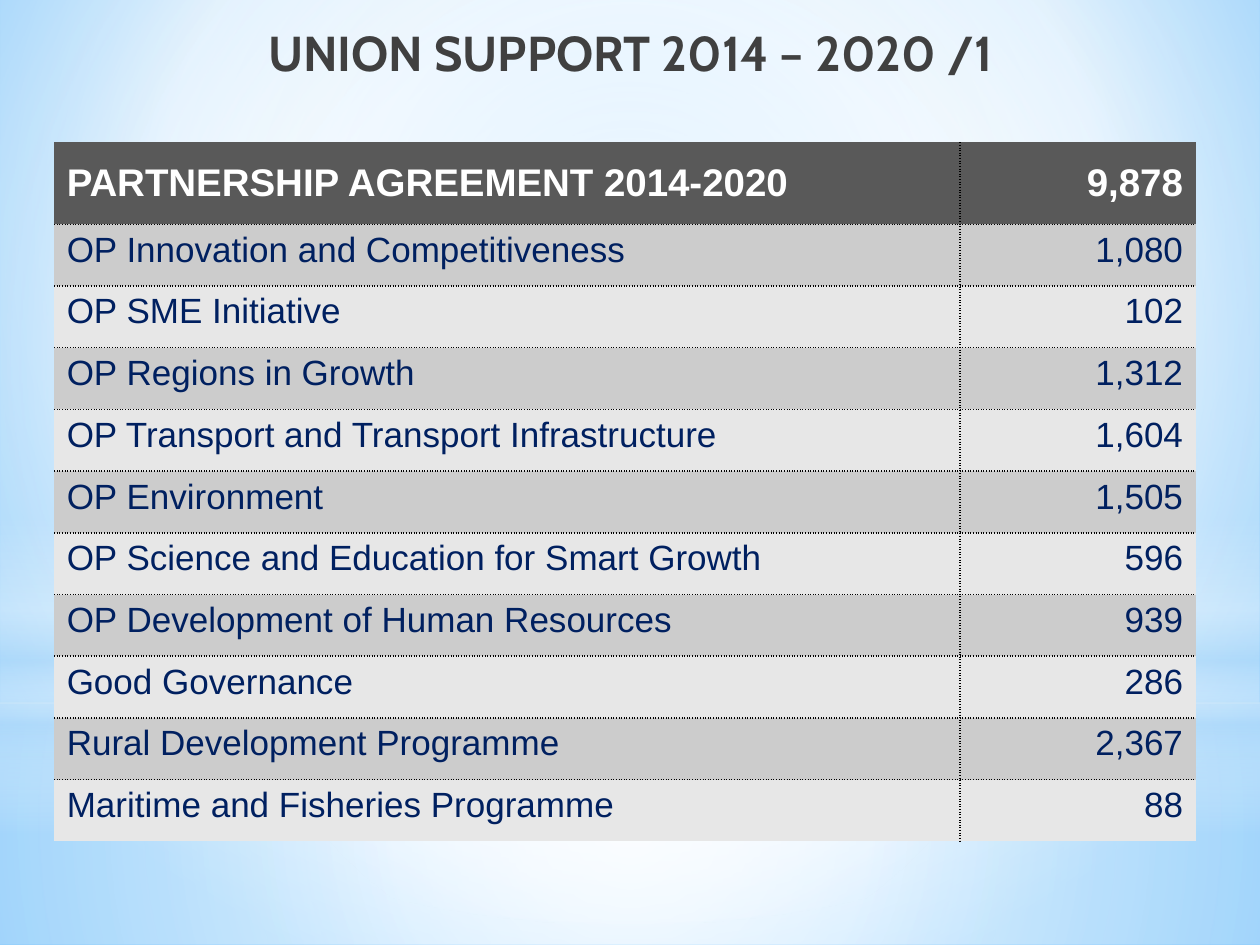
import pptx
import pptx.util
import pptx.dml.color
import pptx.enum.shapes
import pptx.enum.text
import pptx.oxml
import pptx.oxml.ns
import lxml.etree

Inches = pptx.util.Inches
Shape = pptx.enum.shapes.MSO_SHAPE
Align = pptx.enum.text.PP_ALIGN
Anchor = pptx.enum.text.MSO_ANCHOR
qn = pptx.oxml.ns.qn

COLORS = {
    "title": "404040",
    "header": "595959",
    "header_text": "FFFFFF",
    "body_text": "002060",
    "odd_row": "CCCCCC",
    "even_row": "E7E7E7",
    "border": "000000",
    "white": "FFFFFF",
    "haze": "B4DCFA",
    "sky": "9ED5FF",
    "deep_sky": "5BB9FF",
}
CENTER = (50, 50, 50, 50)

PROGRAMMES = [
    ("PARTNERSHIP AGREEMENT 2014-2020", "9,878"),
    ("OP Innovation and Competitiveness", "1,080"),
    ("OP SME Initiative", "102"),
    ("OP Regions in Growth", "1,312"),
    ("OP Transport and Transport Infrastructure", "1,604"),
    ("OP Environment", "1,505"),
    ("OP Science and Education for Smart Growth", "596"),
    ("OP Development of Human Resources", "939"),
    ("Good Governance", "286"),
    ("Rural Development Programme", "2,367"),
    ("Maritime and Fisheries Programme", "88"),
]


def add_node(parent, tag, **attributes):
    node = lxml.etree.SubElement(parent, qn(tag))
    for key, value in attributes.items():
        node.set(key, str(value))
    return node


class SlideBuilder:
    def __init__(self, slide):
        self.slide = slide
        self.title_font = "Cabin"
        self.table_font = "Arial"

    def gradient(self, fill, owner, stops, focus=None):
        fill.gradient()
        grad = next(owner.iter(qn("a:gradFill")))
        for child in list(grad):
            grad.remove(child)
        stop_list = add_node(grad, "a:gsLst")
        for position, color, opacity in stops:
            stop = add_node(stop_list, "a:gs", pos=position * 1000)
            rgb = add_node(stop, "a:srgbClr", val=COLORS[color])
            if opacity < 100:
                add_node(rgb, "a:alpha", val=opacity * 1000)
        if focus:
            circle = add_node(grad, "a:path", path="circle")
            edges = dict(zip("ltrb", (edge * 1000 for edge in focus)))
            add_node(circle, "a:fillToRect", **edges)
        else:
            add_node(grad, "a:lin", ang=90 * 60000, scaled=0)

    def background(self, stops, focus):
        self.gradient(self.slide.background.fill, self.slide.element, stops, focus)

    def glow(self, kind, top, height, stops, focus=None):
        shape = self.slide.shapes.add_shape(
            kind, 0, Inches(top), Inches(10), Inches(height))
        shape.shadow.inherit = False
        shape.line.fill.background()
        self.gradient(shape.fill, shape.element, stops, focus)

    def style_text(self, paragraph, font, size, color, bold, align):
        paragraph.alignment = align
        for run in paragraph.runs:
            run.font.name = font
            run.font.size = pptx.util.Pt(size)
            run.font.bold = bold
            run.font.color.rgb = pptx.dml.color.RGBColor.from_string(COLORS[color])

    def title(self, text, top, height):
        box = self.slide.shapes.add_textbox(0, Inches(top), Inches(10), Inches(height))
        frame = box.text_frame
        frame.word_wrap = True
        frame.auto_size = pptx.enum.text.MSO_AUTO_SIZE.SHAPE_TO_FIT_TEXT
        frame.text = text
        self.style_text(frame.paragraphs[0], self.title_font, 28, "title", True, Align.CENTER)

    def borders(self, cell, inner_sides):
        properties = cell._tc.get_or_add_tcPr()
        for side in "LRTB":
            line = add_node(properties, f"a:ln{side}", w=pptx.util.Pt(1))
            if side in inner_sides:
                solid = add_node(line, "a:solidFill")
                add_node(solid, "a:srgbClr", val=COLORS["border"])
                add_node(line, "a:prstDash", val="sysDot")
            else:
                add_node(line, "a:noFill")

    def table(self, rows, left, top, widths, header_height, row_height):
        heights = [header_height] + [row_height] * (len(rows) - 1)
        table = self.slide.shapes.add_table(
            len(rows), len(widths), Inches(left), Inches(top),
            Inches(sum(widths)), Inches(sum(heights))).table
        for column, width in zip(table.columns, widths):
            column.width = Inches(width)
        for r, (values, height) in enumerate(zip(rows, heights)):
            table.rows[r].height = Inches(height)
            header = r == 0
            fill = "header" if header else "odd_row" if r % 2 else "even_row"
            for c, value in enumerate(values):
                cell = table.cell(r, c)
                inner = "R" if c == 0 else "L"
                inner += "" if header else "T"
                inner += "B" if r < len(rows) - 1 else ""
                self.borders(cell, inner)
                cell.fill.solid()
                cell.fill.fore_color.rgb = pptx.dml.color.RGBColor.from_string(COLORS[fill])
                cell.vertical_anchor = Anchor.MIDDLE if header else Anchor.TOP
                cell.text_frame.text = value
                self.style_text(
                    cell.text_frame.paragraphs[0], self.table_font,
                    22 if header else 20,
                    "header_text" if header else "body_text",
                    header, Align.RIGHT if c else Align.LEFT)


def main():
    deck = pptx.Presentation()
    deck.slide_width = Inches(10)
    deck.slide_height = Inches(7.5)
    builder = SlideBuilder(deck.slides.add_slide(deck.slide_layouts[6]))

    builder.background(
        [(0, "sky", 100), (60, "white", 100), (100, "deep_sky", 100)], (20, 10, 20, 60))
    builder.glow(Shape.RECTANGLE, 5.58, 1.92,
                 [(0, "white", 91), (37, "white", 76), (100, "haze", 79)], CENTER)
    builder.glow(Shape.RECTANGLE, 0, 5.58,
                 [(0, "white", 89), (48, "white", 62), (100, "haze", 79)], CENTER)
    builder.glow(Shape.RECTANGLE, 4.12, 2.5,
                 [(0, "white", 0), (29, "white", 30), (45, "haze", 40),
                  (55, "white", 26), (65, "haze", 60), (100, "white", 0)])
    builder.glow(Shape.OVAL, 1.75, 5.58,
                 [(0, "white", 100), (56, "white", 0)], CENTER)

    builder.title("UNION SUPPORT 2014 – 2020 /1", 0.13, 0.57)
    builder.table(PROGRAMMES, 0.43, 1.13, (7.19, 1.87), 0.65, 0.49)
    deck.save("out.pptx")


if __name__ == "__main__":
    main()
